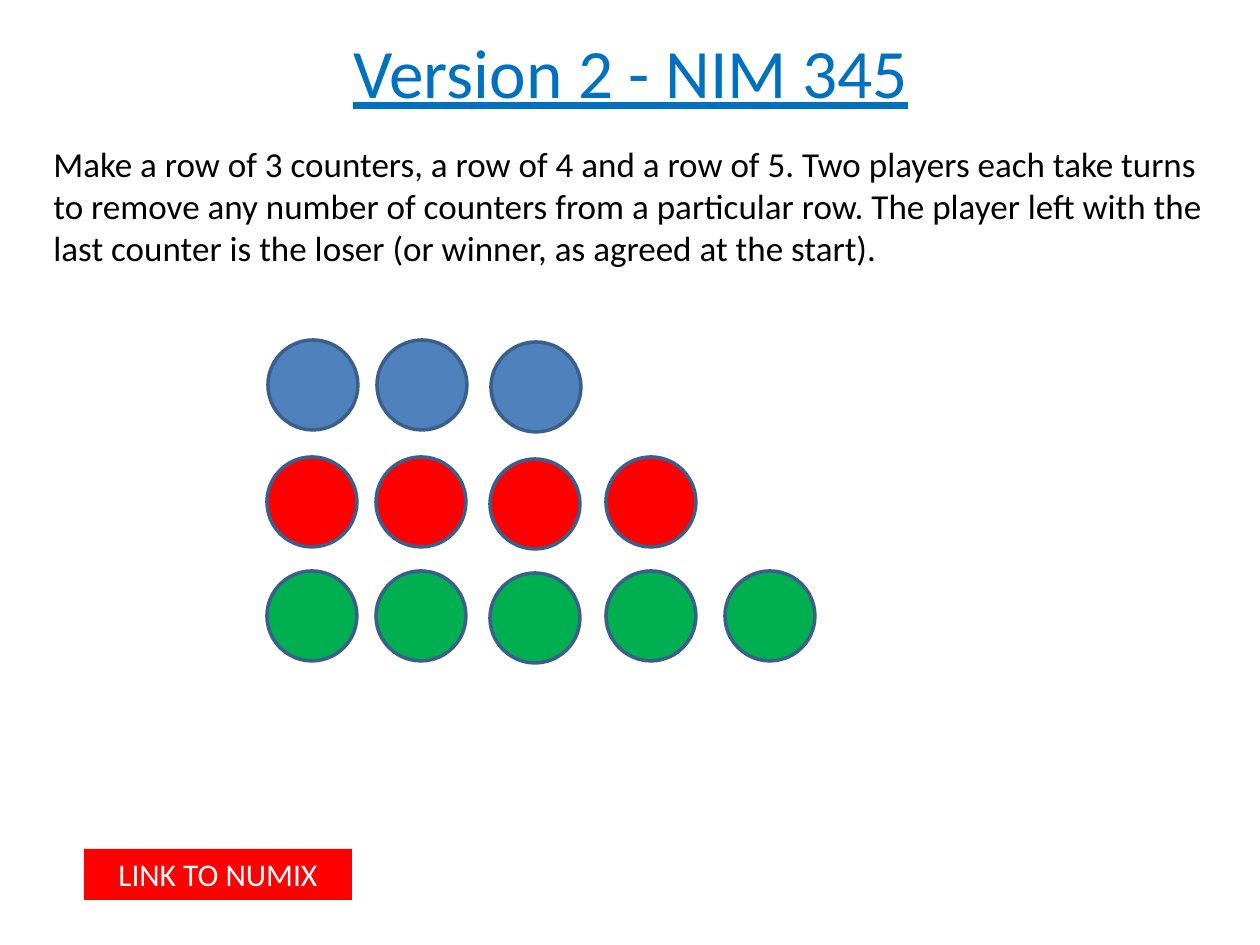
"""Build the NIM 345 slide with its rows of counters."""
import pptx
import pptx.dml.color
import pptx.enum.shapes
import pptx.enum.text
import pptx.util

PX = 914400 // 126
SHAPES = pptx.enum.shapes.MSO_SHAPE
ALIGN = pptx.enum.text.PP_ALIGN
ANCHOR = pptx.enum.text.MSO_ANCHOR


def color(value):
    return pptx.dml.color.RGBColor.from_string(value)


def write(box, text, size, ink, align, anchor):
    frame = box.text_frame
    frame.word_wrap = True
    frame.vertical_anchor = anchor
    para = frame.paragraphs[0]
    para.alignment = align
    span = para.add_run()
    span.text = text
    span.font.name = "Calibri"
    span.font.size = pptx.util.Pt(size)
    span.font.color.rgb = color(ink)
    return span


deck = pptx.Presentation()
deck.slide_width = pptx.util.Inches(10)
deck.slide_height = pptx.util.Inches(7.5)
page = deck.slides.add_slide(deck.slide_layouts[6])

title = page.shapes.add_textbox(64 * PX, 37 * PX, 1134 * PX, 68 * PX)
heading = write(title, "Version 2 - NIM 345", 39.6, "0070C0", ALIGN.CENTER, ANCHOR.MIDDLE)
heading.font.underline = True

rules = page.shapes.add_textbox(41 * PX, 136 * PX, 1181 * PX, 394 * PX)
write(
    rules,
    "Make a row of 3 counters, a row of 4 and a row of 5. Two players each take turns "
    "to remove any number of counters from a particular row. The player left with the "
    "last counter is the loser (or winner, as agreed at the start).",
    20, "000000", ALIGN.LEFT, ANCHOR.TOP,
)

button = page.shapes.add_shape(SHAPES.RECTANGLE, 84 * PX, 849 * PX, 268 * PX, 51 * PX)
button.shadow.inherit = False
button.fill.solid()
button.fill.fore_color.rgb = color("FF0000")
button.line.fill.background()
write(button, "LINK TO NUMIX", 18, "FFFFFF", ALIGN.CENTER, ANCHOR.TOP)

columns = [(267, 0), (376, 0), (490, 2), (606, 0), (725, 0)]
rows = [(3, 1, 340, "4F81BD"), (4, 0, 457, "FF0000"), (5, 0, 571, "00B050")]
for count, shift, top, fill in rows:
    for left, drop in columns[:count]:
        counter = page.shapes.add_shape(
            SHAPES.OVAL, (left + shift) * PX, (top + drop) * PX, 90 * PX, 90 * PX
        )
        counter.shadow.inherit = False
        counter.fill.solid()
        counter.fill.fore_color.rgb = color(fill)
        counter.line.color.rgb = color("3A5F8C")
        counter.line.width = pptx.util.Pt(2)

deck.save("out.pptx")
